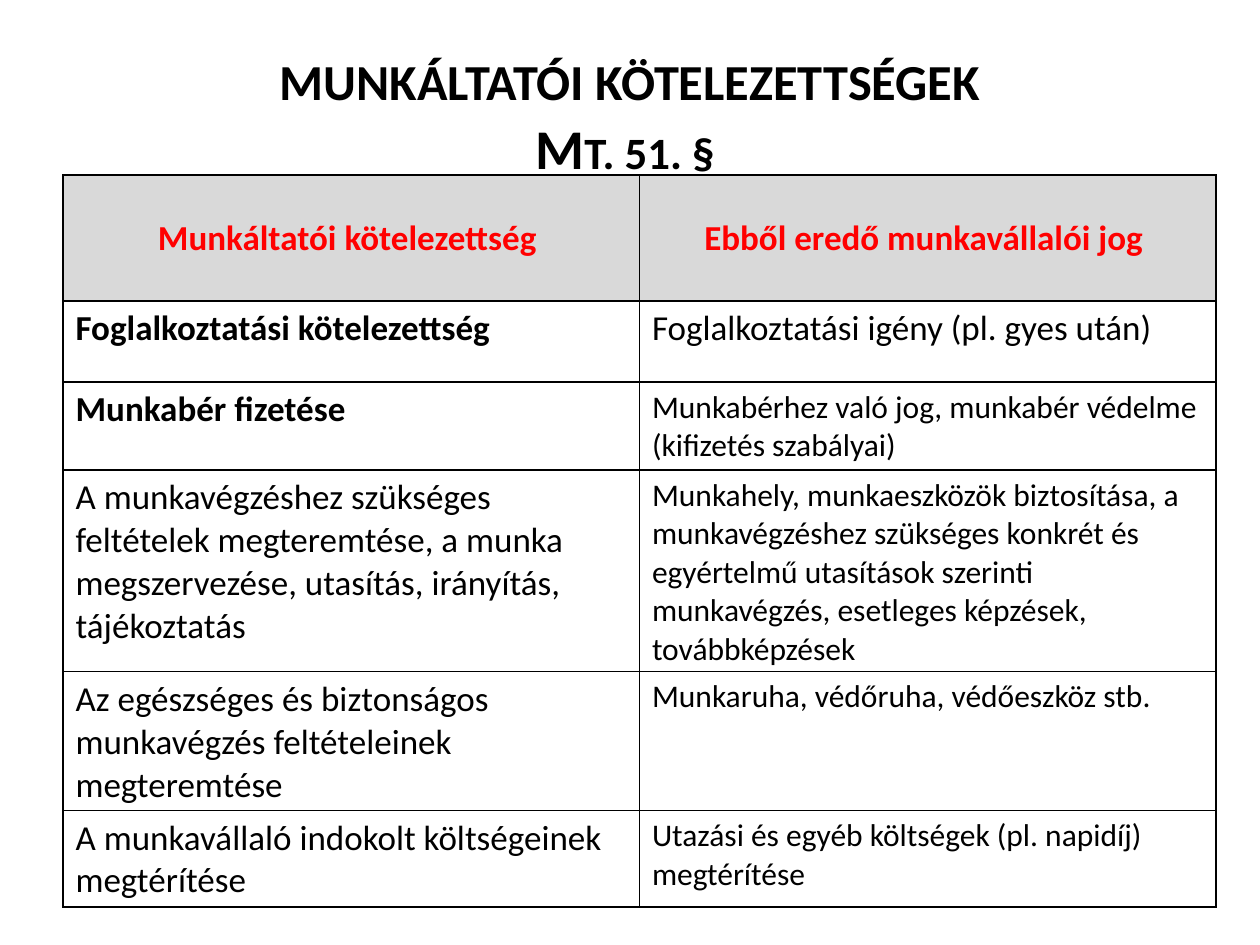
from lxml import etree
from pptx import Presentation
from pptx.dml.color import RGBColor
from pptx.enum.text import MSO_ANCHOR, PP_ALIGN
from pptx.oxml.ns import qn
from pptx.util import Inches, Pt

CENTER, LEFT = PP_ALIGN.CENTER, PP_ALIGN.LEFT
MIDDLE, TOP = MSO_ANCHOR.MIDDLE, MSO_ANCHOR.TOP
BLANK = 6
BLACK, RED, GRAY = "000000", "FF0000", "D9D9D9"

TITLE = [("munkáltatói kötelezettségek", 36), ("Mt. 51. § ", 32)]
HEADER = ("Munkáltatói kötelezettség ", "Ebből eredő munkavállalói jog ")
DUTIES = [
    ("Foglalkoztatási kötelezettség", True, "Foglalkoztatási igény (pl. gyes után)", 20),
    ("Munkabér fizetése", True,
     "Munkabérhez való jog, munkabér védelme (kifizetés szabályai)", 18),
    ("A munkavégzéshez szükséges feltételek megteremtése, a munka megszervezése, "
     "utasítás, irányítás, tájékoztatás", False,
     "Munkahely, munkaeszközök biztosítása, a munkavégzéshez szükséges konkrét és "
     "egyértelmű utasítások szerinti munkavégzés, esetleges képzések, továbbképzések", 18),
    ("Az egészséges és biztonságos munkavégzés feltételeinek megteremtése", False,
     "Munkaruha, védőruha, védőeszköz stb.", 18),
    ("A munkavállaló indokolt költségeinek megtérítése", False,
     "Utazási és egyéb költségek (pl. napidíj) megtérítése", 18),
]
ROW_HEIGHTS = [2, 1.28, 1.12, 2.86, 2.08, 1.36]


def color(value):
    return RGBColor.from_string(value)


def grid(units):
    return Inches(units * 0.5)


class SlideBuilder:
    font = "Calibri"

    def __init__(self, deck):
        self.slide = deck.slides.add_slide(deck.slide_layouts[BLANK])

    def style(self, para, size, bold, ink=BLACK, align=LEFT):
        para.alignment = align
        para.font.name = self.font
        para.font.size = Pt(size)
        para.font.bold = bold
        para.font.color.rgb = color(ink)

    def title(self, lines, left, top, width, height):
        box = self.slide.shapes.add_textbox(*map(grid, (left, top, width, height)))
        frame = box.text_frame
        frame.word_wrap = True
        frame.vertical_anchor = TOP
        frame.margin_top = frame.margin_bottom = 0
        para = frame.paragraphs[0]
        self.style(para, lines[0][1], True, align=CENTER)
        for index, (text, size) in enumerate(lines):
            if index:
                para.add_line_break()
            span = para.add_run()
            span.text = text
            span.font.size = Pt(size)
            span.font._element.set("cap", "small")

    def table(self, left, top, width, columns, heights):
        frame = self.slide.shapes.add_table(
            len(heights), columns, grid(left), grid(top), grid(width), grid(sum(heights)))
        table = frame.table
        table.first_row = table.horz_banding = False
        for row, height in zip(table.rows, heights):
            row.height = grid(height)
        return table

    def border(self, cell):
        properties = cell._tc.get_or_add_tcPr()
        for side in ("lnL", "lnR", "lnT", "lnB"):
            line = etree.SubElement(properties, qn("a:" + side), w=str(Pt(1)))
            fill = etree.SubElement(line, qn("a:solidFill"))
            etree.SubElement(fill, qn("a:srgbClr"), val=BLACK)

    def cell(self, cell, text, size, bold, ink=BLACK, align=LEFT, anchor=TOP, fill=None):
        self.border(cell)
        if fill:
            cell.fill.solid()
            cell.fill.fore_color.rgb = color(fill)
        else:
            cell.fill.background()
        cell.vertical_anchor = anchor
        cell.text = text
        self.style(cell.text_frame.paragraphs[0], size, bold, ink, align)


def main():
    deck = Presentation()
    deck.slide_width, deck.slide_height = grid(20), grid(15)
    page = SlideBuilder(deck)
    page.title(TITLE, 1, 0.6, 18, 1.7)
    table = page.table(1, 2.78, 18.3, 2, ROW_HEIGHTS)
    for column, text in enumerate(HEADER):
        page.cell(table.cell(0, column), text, 20, True, RED, CENTER, MIDDLE, GRAY)
    for row, (duty, bold, right, size) in enumerate(DUTIES, 1):
        page.cell(table.cell(row, 0), duty, 20, bold)
        page.cell(table.cell(row, 1), right, size, False)
    deck.save("out.pptx")


if __name__ == "__main__":
    main()
